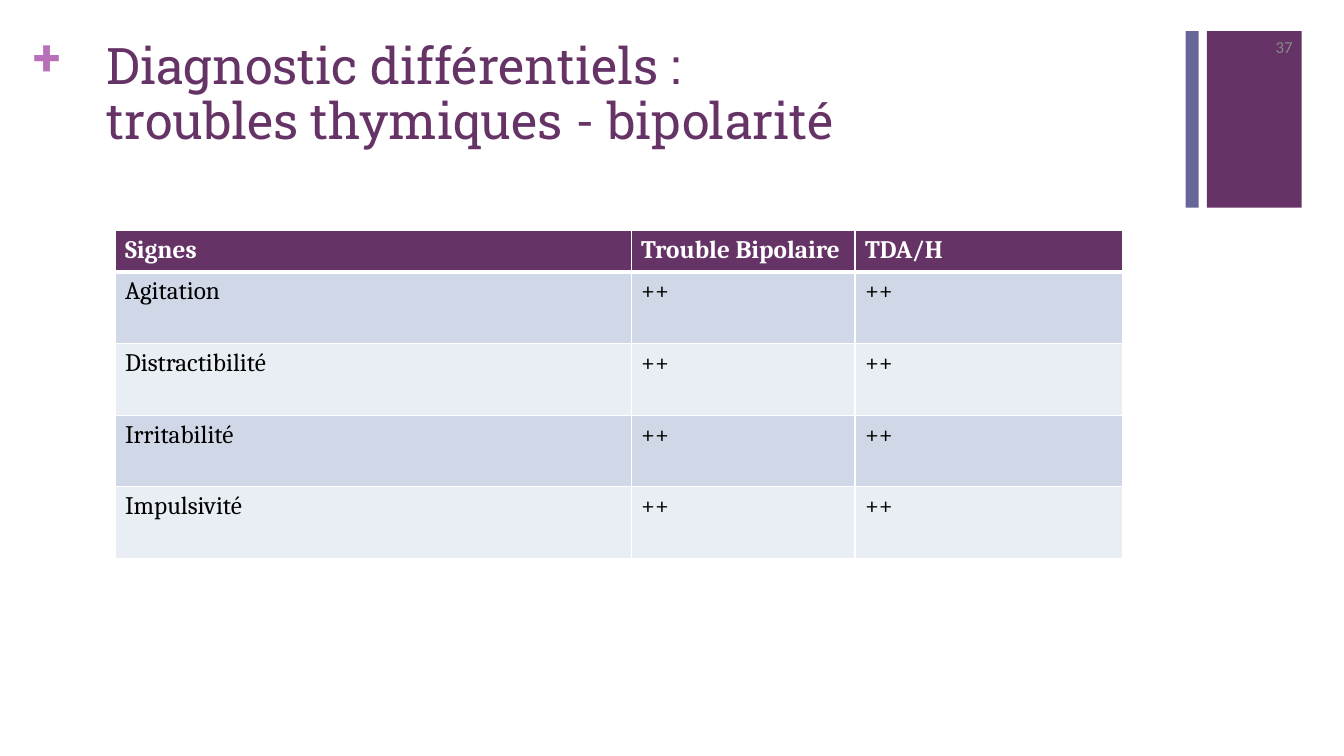
from dataclasses import dataclass

from lxml.etree import SubElement
from pptx import Presentation
from pptx.dml.color import RGBColor
from pptx.enum.shapes import MSO_SHAPE
from pptx.enum.text import MSO_ANCHOR, MSO_AUTO_SIZE, PP_ALIGN
from pptx.oxml.ns import qn
from pptx.util import Emu, Pt

PX = 9144  # 100 px to the inch


@dataclass(frozen=True)
class Theme:
    purple: str = "663366"
    indigo: str = "666699"
    orchid: str = "B870B8"
    gray: str = "898989"
    white: str = "FFFFFF"
    black: str = "000000"
    bands: tuple = ("D0D8E8", "E9EDF4")
    title_font: str = "Roboto Slab"
    table_font: str = "Cambria"
    number_font: str = "Calibri"
    title_size: int = 36
    table_size: int = 18
    number_size: int = 12


theme = Theme()


def style_font(paragraph, name, size, color, bold=False):
    font = paragraph.font
    font.name, font.size, font.bold = name, Pt(size), bold
    font.color.rgb = RGBColor.from_string(color)


def add_text(text, left, top, width, height):
    """Add a wrapping text box; return its frame and first paragraph."""
    box = slide.shapes.add_textbox(*(Emu(n * PX) for n in (left, top, width, height)))
    box.text_frame.word_wrap = True
    box.text_frame.text = text
    return box.text_frame, box.text_frame.paragraphs[0]


presentation = Presentation()
presentation.slide_width = Emu(1333 * PX)
presentation.slide_height = Emu(750 * PX)
slide = presentation.slides.add_slide(presentation.slide_layouts[6])

# Corner bars
for left, width, color in ((1197, 94, theme.purple), (1176, 13, theme.indigo)):
    bar = slide.shapes.add_shape(
        MSO_SHAPE.RECTANGLE, *(Emu(n * PX) for n in (left, 31, width, 175))
    )
    bar.shadow.inherit = False
    bar.fill.solid()
    bar.fill.fore_color.rgb = RGBColor.from_string(color)
    bar.line.fill.background()

# Plus sign, slide number and title
frame, paragraph = add_text("+", 33, 25, 38, 61)
frame.margin_left = frame.margin_right = frame.margin_top = frame.margin_bottom = 0
frame.auto_size = MSO_AUTO_SIZE.SHAPE_TO_FIT_TEXT
style_font(paragraph, theme.title_font, theme.title_size, theme.orchid, bold=True)

frame, paragraph = add_text("37", 1211, 26, 81, 40)
frame.vertical_anchor = MSO_ANCHOR.MIDDLE
paragraph.alignment = PP_ALIGN.RIGHT
style_font(paragraph, theme.number_font, theme.number_size, theme.gray)

frame, paragraph = add_text(
    "Diagnostic différentiels :\vtroubles thymiques - bipolarité", 96, 36, 1030, 122
)
paragraph.line_spacing = 0.9
style_font(paragraph, theme.title_font, theme.title_size, theme.purple)

# Table of signs
signs = ("Agitation", "Distractibilité", "Irritabilité", "Impulsivité")
rows = [("Signes", "Trouble Bipolaire", "TDA/H")]
rows += [(sign, "++", "++") for sign in signs]
column_widths = (512, 222, 265)
row_heights = [41] + [71] * len(signs)

table = slide.shapes.add_table(
    len(rows), len(column_widths), Emu(114 * PX), Emu(229 * PX),
    Emu(sum(column_widths) * PX), Emu(sum(row_heights) * PX),
).table
for column, width in zip(table.columns, column_widths):
    column.width = Emu(width * PX)
for row, height in zip(table.rows, row_heights):
    row.height = Emu(height * PX)

for row_index, row in enumerate(rows):
    header = row_index == 0
    fill_color = theme.purple if header else theme.bands[(row_index - 1) % 2]
    border_widths = {
        "L": 1,
        "R": 1,
        "T": 3 if row_index == 1 else 1,
        "B": 3 if header else 1,
    }
    for column_index, text in enumerate(row):
        cell = table.cell(row_index, column_index)
        cell.text = text
        style_font(
            cell.text_frame.paragraphs[0], theme.table_font, theme.table_size,
            theme.white if header else theme.black, bold=header,
        )
        properties = cell._tc.get_or_add_tcPr()
        for side, width in border_widths.items():
            border = SubElement(properties, qn(f"a:ln{side}"), w=str(Pt(width)))
            border_fill = SubElement(border, qn("a:solidFill"))
            SubElement(border_fill, qn("a:srgbClr"), val=theme.white)
        cell.fill.solid()
        cell.fill.fore_color.rgb = RGBColor.from_string(fill_color)

presentation.save("out.pptx")
